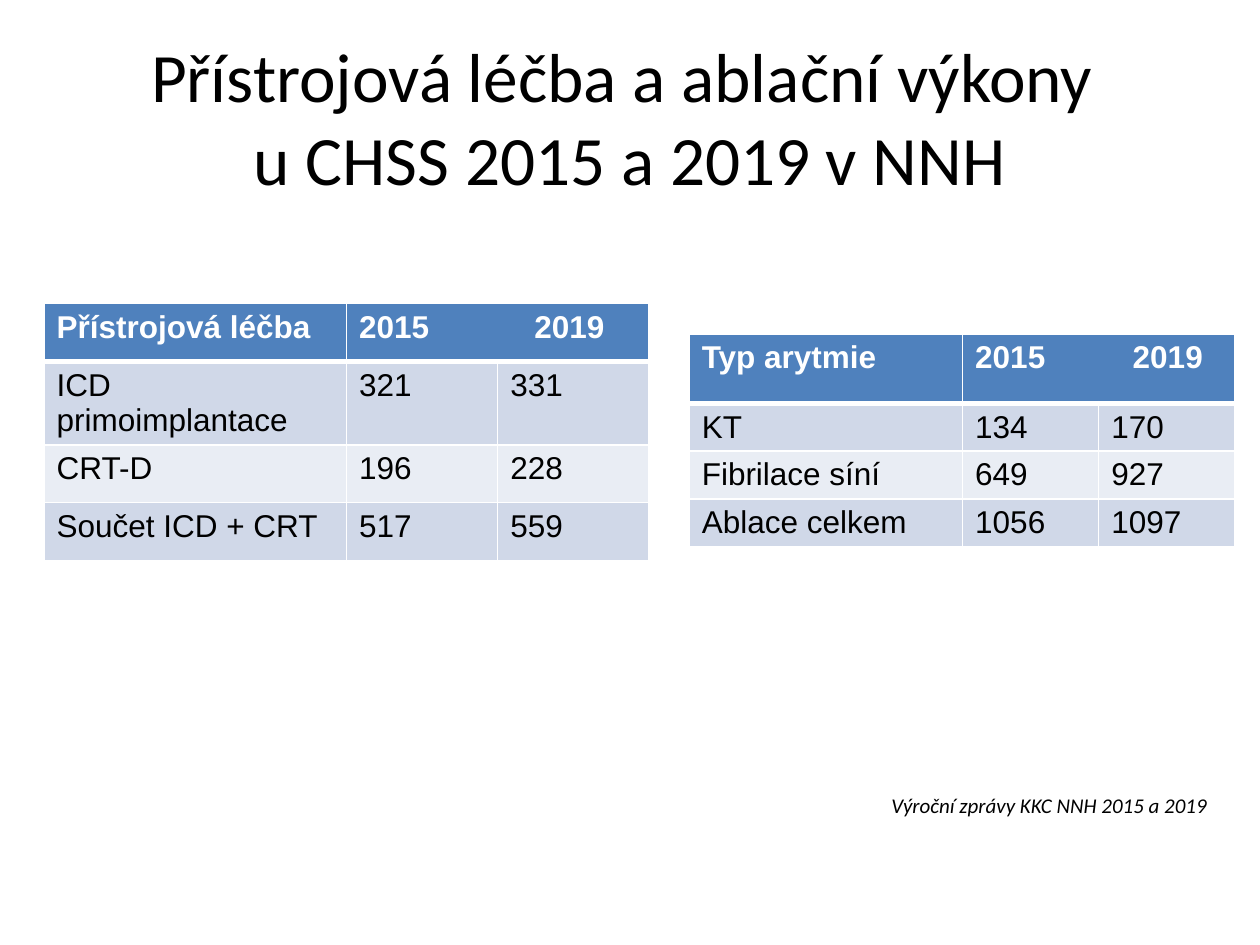
from dataclasses import dataclass

from lxml.etree import SubElement
from pptx import Presentation
from pptx.dml.color import RGBColor
from pptx.enum.text import MSO_ANCHOR, PP_ALIGN
from pptx.oxml.ns import qn
from pptx.util import Inches, Pt

WHITE, BLACK = "FFFFFF", "000000"
HEADER_FILL = "4F81BD"
BAND_FILLS = ("D0D8E8", "E9EDF4")
BORDER_SIDES = ("lnL", "lnR", "lnT", "lnB")


@dataclass
class TextBox:
    text: str
    left: float
    top: float
    width: float
    height: float
    anchor: MSO_ANCHOR
    align: PP_ALIGN
    font: dict
    top_inset: float = 0.05


@dataclass
class YearTable:
    heading: str
    rows: list
    left: float
    top: float
    widths: tuple
    header_height: float
    row_height: float
    year_tab: float


def color(value: str) -> RGBColor:
    return RGBColor.from_string(value)


def style_font(font, formats: dict, font_color: str) -> None:
    for name, value in formats.items():
        setattr(font, name, value)
    font.color.rgb = color(font_color)


def add_text(page, item: TextBox) -> None:
    box = page.shapes.add_textbox(
        *map(Inches, (item.left, item.top, item.width, item.height)))
    frame = box.text_frame
    frame.word_wrap = True
    frame.vertical_anchor = item.anchor
    frame.margin_top = Inches(item.top_inset)
    para = frame.paragraphs[0]
    para.text = item.text
    para.alignment = item.align
    for span in para.runs:
        style_font(span.font, item.font, BLACK)


def add_borders(cell, bottom_width: float) -> None:
    """Draw white cell borders; call before filling, as lines come first."""
    properties = cell._tc.get_or_add_tcPr()
    for side in BORDER_SIDES:
        width = bottom_width if side == "lnB" else 1
        line = SubElement(properties, qn(f"a:{side}"), w=str(Pt(width)))
        fill = SubElement(line, qn("a:solidFill"))
        SubElement(fill, qn("a:srgbClr"), val=WHITE)


def fill_cell(cell, text: str, fill: str, is_header: bool) -> None:
    add_borders(cell, 3 if is_header else 1)
    cell.fill.solid()
    cell.fill.fore_color.rgb = color(fill)
    para = cell.text_frame.paragraphs[0]
    para.text = text
    formats = {"name": "Arial", "size": Pt(18), "bold": is_header}
    for span in para.runs:
        style_font(span.font, formats, WHITE if is_header else BLACK)


def add_tab_stop(para, position: float) -> None:
    tabs = SubElement(para._p.get_or_add_pPr(), qn("a:tabLst"))
    SubElement(tabs, qn("a:tab"), pos=str(Inches(position)), algn="l")


def add_year_table(page, item: YearTable) -> None:
    content = [(item.heading, "2015\t2019", ""), *item.rows]
    heights = [item.header_height] + [item.row_height] * len(item.rows)
    table = page.shapes.add_table(
        len(content), len(item.widths), Inches(item.left), Inches(item.top),
        Inches(sum(item.widths)), Inches(sum(heights))).table
    for column, width in zip(table.columns, item.widths):
        column.width = Inches(width)
    for row, height in zip(table.rows, heights):
        row.height = Inches(height)

    for row_index, values in enumerate(content):
        is_header = row_index == 0
        fill = HEADER_FILL if is_header else BAND_FILLS[(row_index - 1) % 2]
        for column_index, value in enumerate(values):
            fill_cell(table.cell(row_index, column_index), value, fill, is_header)

    years = table.cell(0, 1)
    years.merge(table.cell(0, 2))
    add_tab_stop(years.text_frame.paragraphs[0], item.year_tab)


TEXTS = [
    TextBox("Přístrojová léčba a ablační výkony \vu CHSS 2015 a 2019 v NNH",
            0.5, 0.3, 9, 1.25, MSO_ANCHOR.MIDDLE, PP_ALIGN.CENTER,
            {"name": "Calibri", "size": Pt(39.6)}),
    TextBox("Výroční zprávy KKC NNH 2015 a 2019",
            5.94, 6.27, 3.74, 0.43, MSO_ANCHOR.TOP, PP_ALIGN.RIGHT,
            {"name": "Calibri", "size": Pt(12), "italic": True}, top_inset=0.02),
]

TABLES = [
    YearTable("Přístrojová léčba",
              [("ICD primoimplantace", "321", "331"),
               ("CRT-D", "196", "228"),
               ("Součet ICD + CRT", "517", "559")],
              0.35, 2.41, (2.4, 1.2, 1.2), 0.46, 0.46, 1.39),
    YearTable("Typ arytmie",
              [("KT", "134", "170"),
               ("Fibrilace síní", "649", "927"),
               ("Ablace celkem", "1056", "1097")],
              5.47, 2.65, (2.17, 1.08, 1.08), 0.55, 0.36, 1.25),
]


def main() -> None:
    deck = Presentation()
    deck.slide_width, deck.slide_height = Inches(10), Inches(7.5)
    page = deck.slides.add_slide(deck.slide_layouts[6])
    for table in TABLES:
        add_year_table(page, table)
    for text in TEXTS:
        add_text(page, text)
    deck.save("out.pptx")


if __name__ == "__main__":
    main()
